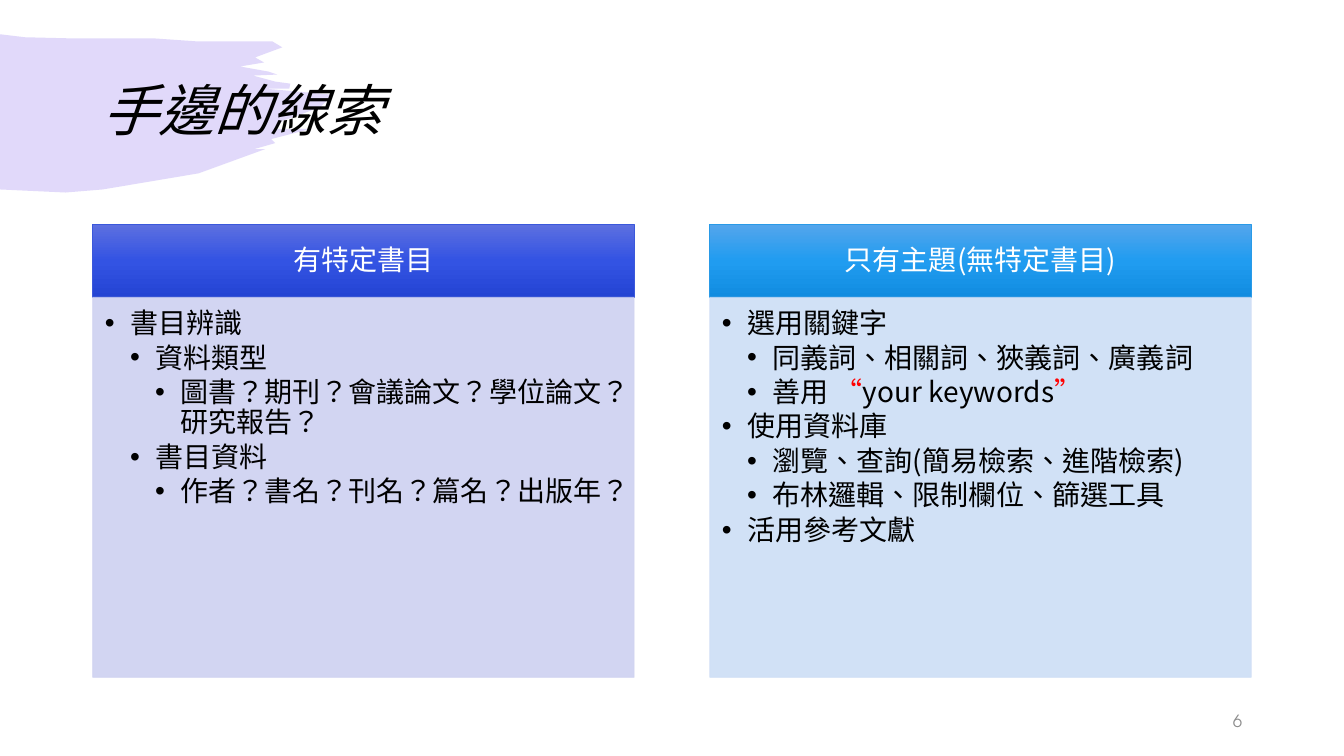
from copy import deepcopy

from lxml import etree
from pptx import Presentation
from pptx import util as u
from pptx.dml import color
from pptx.enum import shapes, text
from pptx.oxml import ns

PX = 9144
BRUSH_OUTLINE = [
    (0, 34), (25, 37), (66, 38), (151, 38), (194, 41), (248, 41), (270, 41), (280, 47),
    (253, 57), (262, 62), (238, 66), (266, 71), (275, 74), (251, 75), (273, 81), (288, 83),
    (287, 88), (263, 88), (330, 94), (318, 106), (300, 113), (280, 120), (274, 128),
    (308, 128), (269, 138), (273, 142), (252, 148), (263, 148), (197, 172), (102, 188),
    (65, 191), (0, 188),
]
COLUMNS = [
    ("有特定書目", ("5C6FE0", "3353E3", "2444D3"), "3B58DB", "CED1F1", [
        (0, ["書目辨識"]),
        (1, ["資料類型"]),
        (2, ["圖書？期刊？會議論文？學位論文？研究報告？"]),
        (1, ["書目資料"]),
        (2, ["作者？書名？刊名？篇名？出版年？"]),
    ]),
    ("只有主題(無特定書目)", ("53A5EC", "209CF0", "118CE0"), "299AE7", "CDDEF6", [
        (0, ["選用關鍵字"]),
        (1, ["同義詞、相關詞、狹義詞、廣義詞"]),
        (1, ["善用 ", "“", "your keywords", "”"]),
        (0, ["使用資料庫"]),
        (1, ["瀏覽、查詢(簡易檢索、進階檢索)"]),
        (1, ["布林邏輯、限制欄位、篩選工具"]),
        (0, ["活用參考文獻"]),
    ]),
]


def rgb(value):
    return color.RGBColor.from_string(value)


class SlideMaker:
    """Holds the style and the current slide, and draws each kind of element."""

    font = "Noto Sans CJK SC"
    number_font = "TeX Gyre Adventor"

    def __init__(self, deck):
        self.page = deck.slides.add_slide(deck.slide_layouts[5])

    def style(self, span, size, tint, font=font, italic=None):
        span.font.size = u.Pt(size)
        span.font.name = font
        span.font.italic = italic
        span.font.color.rgb = rgb(tint)
        properties = span.font._element
        properties.set("lang", "zh-TW")
        latin = properties.find(ns.qn("a:latin"))
        latin.addnext(etree.Element(ns.qn("a:ea"), typeface=font))

    def frame(self, box, insets, anchor):
        frame = box.text_frame
        frame.word_wrap = True
        frame.auto_size = text.MSO_AUTO_SIZE.NONE
        frame.vertical_anchor = anchor
        (frame.margin_left, frame.margin_top,
         frame.margin_right, frame.margin_bottom) = (inset * PX for inset in insets)
        return frame

    def place(self, box, left, top, width, height):
        box.left, box.top, box.width, box.height = (n * PX for n in (left, top, width, height))

    def fade(self, fill_parent, percent):
        for tint in fill_parent.iter(ns.qn("a:srgbClr")):
            etree.SubElement(tint, ns.qn("a:alpha"), val=str(percent * 1000))

    def line_of_text(self, box, words, size, tint, align, font=font, italic=None,
                     insets=(10, 5, 10, 5), spacing=None, after=None):
        frame = self.frame(box, insets, text.MSO_ANCHOR.MIDDLE)
        frame.text = words
        para = frame.paragraphs[0]
        para.alignment = align
        para.line_spacing = spacing
        para.space_after = after
        self.style(para.runs[0], size, tint, font, italic)

    def title(self, words, *area):
        box = self.page.shapes.title
        self.place(box, *area)
        self.line_of_text(box, words, 40, "000000", text.PP_ALIGN.LEFT,
                          italic=True, spacing=0.9)

    def page_number(self, number, *area):
        box = self.page.shapes.add_textbox(0, 0, 0, 0)
        self.place(box, *area)
        self.line_of_text(box, number, 12, "8C8C8C", text.PP_ALIGN.RIGHT, self.number_font)

    def brush(self, outline, tint, opacity):
        builder = self.page.shapes.build_freeform(*outline[0], scale=PX)
        builder.add_line_segments(outline[1:])
        stroke = builder.convert_to_shape()
        stroke.shadow.inherit = False
        stroke.fill.solid()
        stroke.fill.fore_color.rgb = rgb(tint)
        stroke.line.fill.background()
        self.fade(stroke._element.spPr, opacity)
        self.page.shapes.element.insert(2, stroke._element)

    def rectangle(self, area, edge):
        box = self.page.shapes.add_shape(shapes.MSO_SHAPE.RECTANGLE, 0, 0, 0, 0)
        self.place(box, *area)
        box.shadow.inherit = False
        box.line.color.rgb = rgb(edge)
        box.line.width = u.Pt(0.5)
        return box

    def header(self, words, tints, edge, *area):
        box = self.rectangle(area, edge)
        box.fill.gradient()
        box.fill.gradient_angle = 270
        stop_list = box._element.spPr.find(".//" + ns.qn("a:gsLst"))
        stop_list.append(deepcopy(stop_list[0]))
        for stop, tint, position in zip(box.fill.gradient_stops, tints, (0, 0.5, 1)):
            stop.color.rgb = rgb(tint)
            stop.position = position
        self.line_of_text(box, words, 20, "FFFFFF", text.PP_ALIGN.CENTER,
                          insets=(16, 9, 16, 9), spacing=0.9, after=u.Pt(7))

    def panel(self, items, tint, *area):
        box = self.rectangle(area, tint)
        box.fill.solid()
        box.fill.fore_color.rgb = rgb(tint)
        self.fade(box._element.spPr, 90)
        frame = self.frame(box, (12, 12, 16, 17), text.MSO_ANCHOR.TOP)
        for index, (level, pieces) in enumerate(items):
            para = frame.add_paragraph() if index else frame.paragraphs[0]
            para.level = level
            para.alignment = text.PP_ALIGN.LEFT
            para.line_spacing = 0.9
            para.space_after = u.Pt(3)
            properties = para._p.get_or_add_pPr()
            properties.set("marL", str(25 * (level + 1) * PX))
            properties.set("indent", str(-25 * PX))
            etree.SubElement(properties, ns.qn("a:buFont"), typeface="Arial")
            etree.SubElement(properties, ns.qn("a:buChar"), char="•")
            for piece in pieces:
                span = para.add_run()
                span.text = piece
                self.style(span, 20, "FF0000" if piece in "“”" else "000000")


def main():
    deck = Presentation()
    deck.slide_width, deck.slide_height = 1333 * PX, 750 * PX
    maker = SlideMaker(deck)
    maker.brush(BRUSH_OUTLINE, "6C45EA", 20)
    maker.title("手邊的線索", 92, 40, 1150, 145)
    for index, (heading, tints, edge, tint, items) in enumerate(COLUMNS):
        left = 92 + 612 * index
        maker.header(heading, tints, edge, left, 223, 537, 72)
        maker.panel(items, tint, left, 295, 537, 377)
    maker.page_number("6", 942, 695, 300, 40)
    deck.save("out.pptx")


if __name__ == "__main__":
    main()
